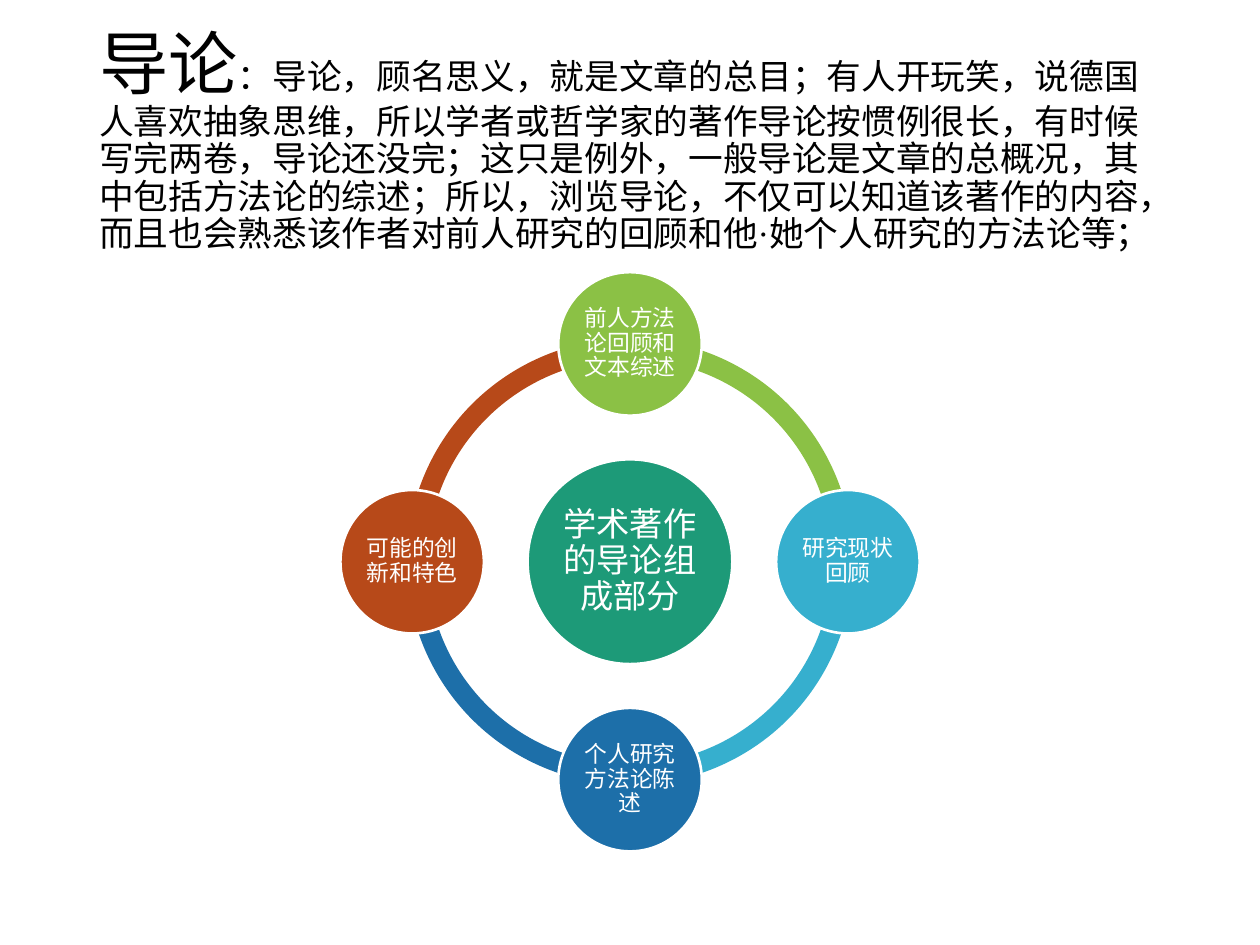
from dataclasses import dataclass
from math import cos, radians, sin

from pptx import Presentation
from pptx.dml.color import RGBColor
from pptx.enum.shapes import MSO_SHAPE
from pptx.enum.text import MSO_ANCHOR, MSO_AUTO_SIZE, PP_ALIGN
from pptx.shapes.group import GroupShape
from pptx.slide import Slide
from pptx.text.text import _Run
from pptx.util import Pt

BLOCK_ARC = MSO_SHAPE.BLOCK_ARC
OVAL = MSO_SHAPE.OVAL
MIDDLE = MSO_ANCHOR.MIDDLE
CENTER = PP_ALIGN.CENTER
LEFT = PP_ALIGN.LEFT
NO_AUTOFIT = MSO_AUTO_SIZE.NONE

BLACK = RGBColor(0x00, 0x00, 0x00)
WHITE = RGBColor(0xFF, 0xFF, 0xFF)
TEAL = RGBColor(0x1D, 0x9A, 0x78)
GREEN = RGBColor(0x8B, 0xC1, 0x45)
CYAN = RGBColor(0x36, 0xAF, 0xCE)
BLUE = RGBColor(0x1D, 0x6F, 0xA9)
RED = RGBColor(0xB7, 0x49, 0x19)

FONT = "Times New Roman"
LINE_SPACING = 0.9
CENTER_X, CENTER_Y = 360, 321
ORBIT = 124.5
RING_SIZE = 255
RING_THICKNESS = 0.046
FULL_TURN, QUARTER_TURN = 216, 54

TITLE_LEAD = "导论"
TITLE_BODY = (
    "：导论，顾名思义，就是文章的总目；有人开玩笑，说德国人喜欢抽象思维，"
    "所以学者或哲学家的著作导论按惯例很长，有时候写完两卷，导论还没完；"
    "这只是例外，一般导论是文章的总概况，其中包括方法论的综述；"
    "所以，浏览导论，不仅可以知道该著作的内容，"
    "而且也会熟悉该作者对前人研究的回顾和他·她个人研究的方法论等；"
)


@dataclass(frozen=True)
class Circle:
    text: str
    color: RGBColor
    size: float = 82
    font_size: float = 13
    inset: float = 1.5


HUB = Circle("学术著作的导论组成部分", TEAL, 117, 19, 2)
NODES = [
    Circle("前人方法论回顾和文本综述", GREEN),
    Circle("研究现状回顾", CYAN),
    Circle("个人研究方法论陈述", BLUE),
    Circle("可能的创新和特色", RED),
]


def format_run(run: _Run, size: float, color: RGBColor) -> None:
    run.font.name = FONT
    run.font.size = Pt(size)
    run.font.color.rgb = color


def fill_title(slide: Slide) -> None:
    title = slide.shapes.title
    title.left, title.top = Pt(49.5), Pt(28.75)
    title.width, title.height = Pt(621), Pt(104.5)
    text_frame = title.text_frame
    text_frame.word_wrap = True
    text_frame.auto_size = NO_AUTOFIT
    text_frame.vertical_anchor = MIDDLE
    paragraph = text_frame.paragraphs[0]
    paragraph.alignment = LEFT
    paragraph.line_spacing = LINE_SPACING
    paragraph.space_before = Pt(0)
    for text, size in ((TITLE_LEAD, 39.6), (TITLE_BODY, 19.8)):
        run = paragraph.add_run()
        run.text = text
        format_run(run, size, BLACK)


def draw_arc(group: GroupShape, index: int, color: RGBColor) -> None:
    shape = group.shapes.add_shape(
        BLOCK_ARC,
        Pt(CENTER_X - RING_SIZE / 2), Pt(CENTER_Y - RING_SIZE / 2),
        Pt(RING_SIZE), Pt(RING_SIZE),
    )
    start = (index - 1) * QUARTER_TURN % FULL_TURN
    shape.adjustments[0] = start
    shape.adjustments[1] = (start + QUARTER_TURN) % FULL_TURN
    shape.adjustments[2] = RING_THICKNESS
    shape.shadow.inherit = False
    shape.fill.solid()
    shape.fill.fore_color.rgb = color
    shape.line.fill.background()


def draw_circle(group: GroupShape, circle: Circle, x: float, y: float) -> None:
    shape = group.shapes.add_shape(
        OVAL,
        Pt(x - circle.size / 2), Pt(y - circle.size / 2),
        Pt(circle.size), Pt(circle.size),
    )
    shape.shadow.inherit = False
    shape.fill.solid()
    shape.fill.fore_color.rgb = circle.color
    shape.line.color.rgb = WHITE
    shape.line.width = Pt(1.5)
    text_frame = shape.text_frame
    text_frame.text = circle.text
    text_frame.word_wrap = True
    text_frame.vertical_anchor = MIDDLE
    text_frame.margin_left = text_frame.margin_right = Pt(circle.inset)
    text_frame.margin_top = text_frame.margin_bottom = Pt(circle.inset)
    paragraph = text_frame.paragraphs[0]
    paragraph.alignment = CENTER
    paragraph.line_spacing = LINE_SPACING
    format_run(paragraph.runs[0], circle.font_size, WHITE)


def draw_cycle(slide: Slide) -> None:
    group = slide.shapes.add_group_shape()
    for index, node in reversed(list(enumerate(NODES))):
        draw_arc(group, index, node.color)
    draw_circle(group, HUB, CENTER_X, CENTER_Y)
    for index, node in enumerate(NODES):
        angle = radians(360 * index / len(NODES) - 90)
        draw_circle(
            group, node,
            CENTER_X + ORBIT * cos(angle), CENTER_Y + ORBIT * sin(angle),
        )


def main() -> None:
    presentation = Presentation()
    presentation.slide_width, presentation.slide_height = Pt(720), Pt(540)
    slide = presentation.slides.add_slide(presentation.slide_layouts[5])
    fill_title(slide)
    draw_cycle(slide)
    presentation.save("out.pptx")


if __name__ == "__main__":
    main()
